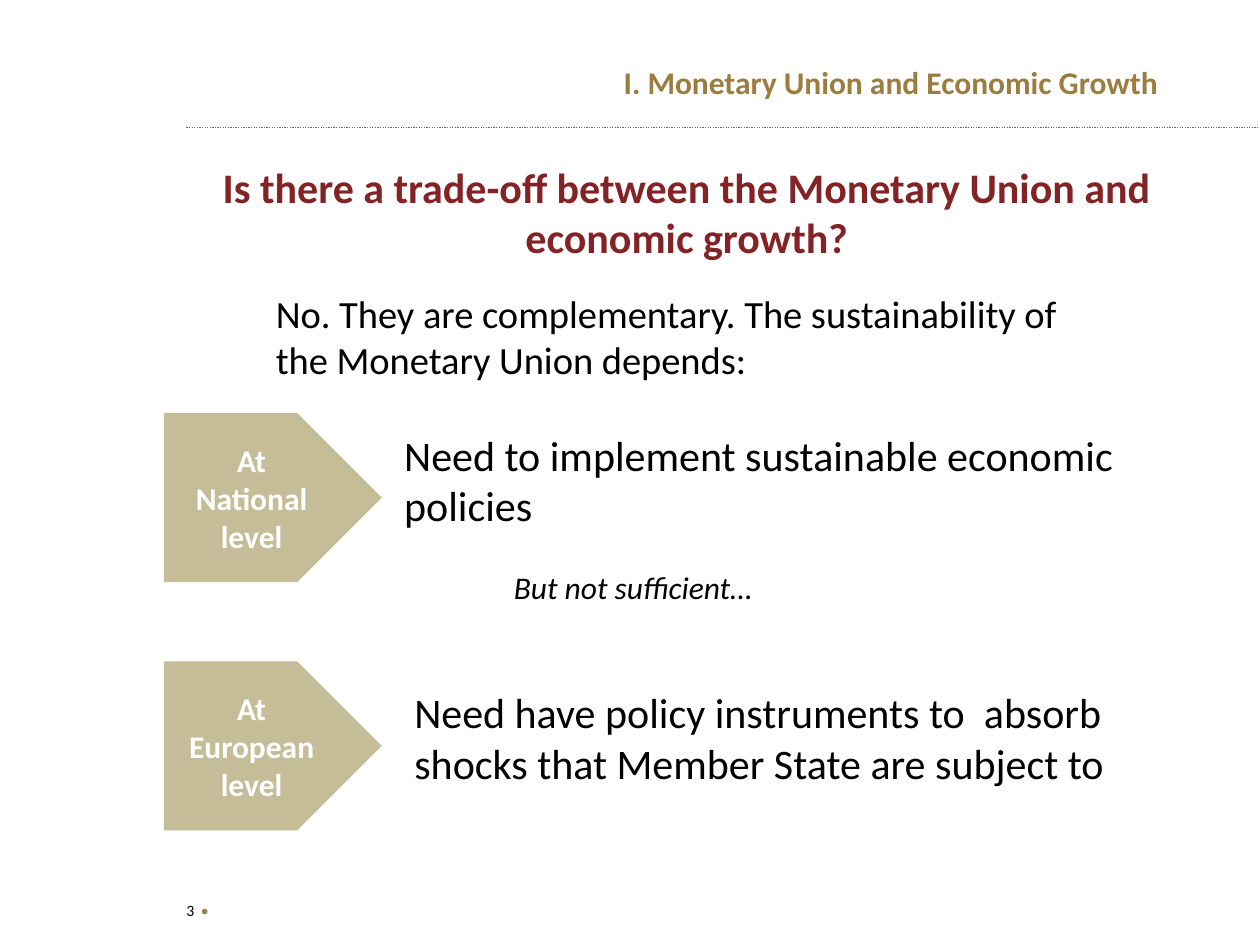
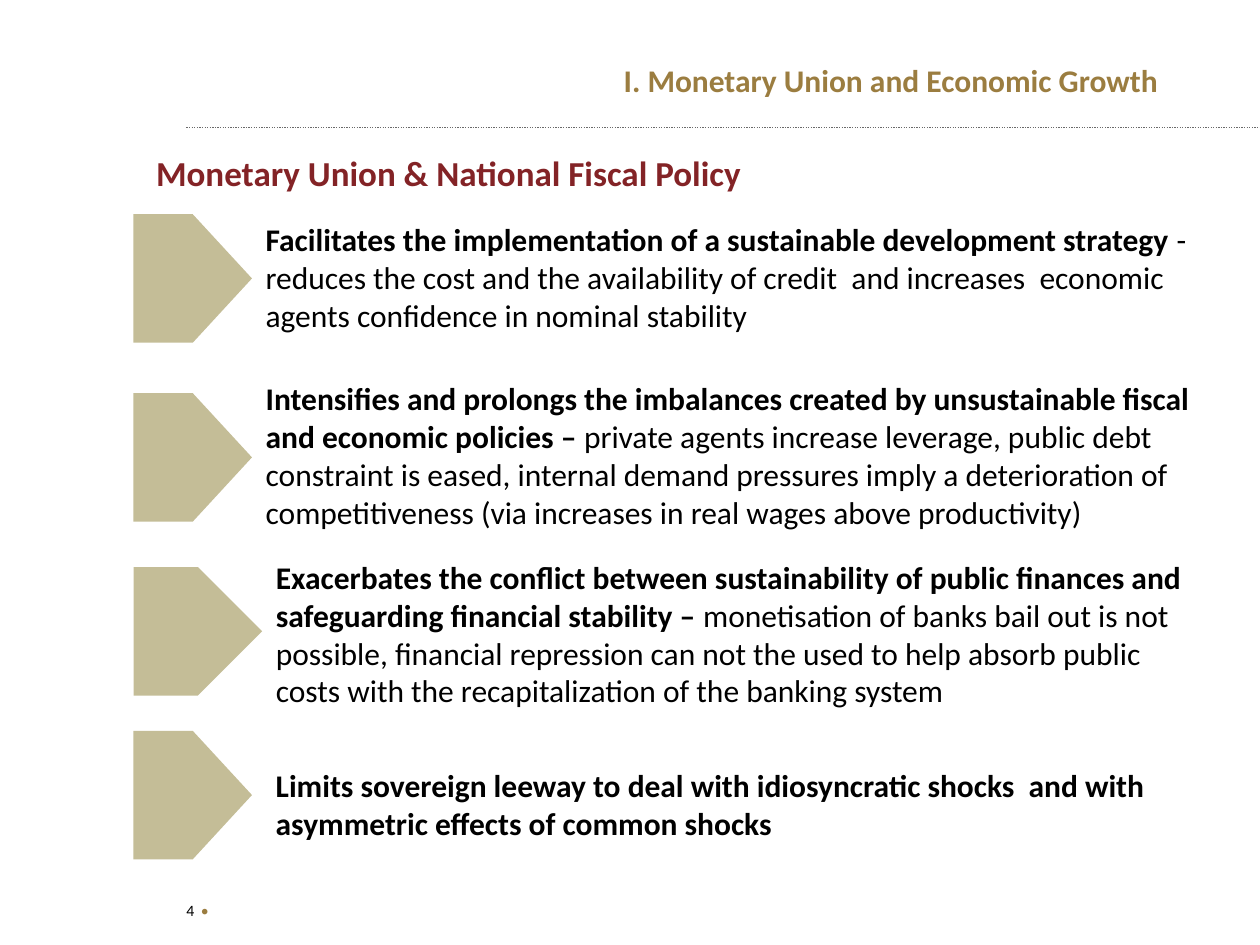
from dataclasses import dataclass
from typing import Optional

import pptx
import pptx.dml.color
import pptx.enum.dml
import pptx.enum.shapes
import pptx.enum.text
import pptx.oxml.ns
import pptx.util
from lxml import etree

Inches = pptx.util.Inches
Pt = pptx.util.Pt
ALIGN = pptx.enum.text.PP_ALIGN
ANCHOR = pptx.enum.text.MSO_ANCHOR

FONT = "Calibri"
COLORS = {
    "gold": "9B7D40",
    "red": "832326",
    "sand": "C4BD97",
    "rule": "696969",
    "text": "000000",
    "white": "FFFFFF",
}
SECTION = "I. Monetary Union and Economic Growth "


@dataclass
class Run:
    text: str
    size: float = 18
    color: str = "text"
    bold: bool = False
    italic: bool = False


@dataclass
class Box:
    left: float
    top: float
    width: float
    height: float
    runs: list[Run]
    align: Optional[int] = None


@dataclass
class Pentagon:
    left: float
    top: float
    width: float
    height: float
    lines: tuple[str, ...] = ()


def rgb(name: str) -> pptx.dml.color.RGBColor:
    return pptx.dml.color.RGBColor.from_string(COLORS[name])


def add_runs(p, runs: list[Run]) -> None:
    for run in runs:
        r = p.add_run()
        r.text = run.text
        r.font.name = FONT
        r.font.size = Pt(run.size)
        r.font.bold = run.bold
        r.font.italic = run.italic
        r.font.color.rgb = rgb(run.color)


def add_box(s, box: Box, inset: bool = True):
    sp = s.shapes.add_textbox(Inches(box.left), Inches(box.top),
                              Inches(box.width), Inches(box.height))
    tf = sp.text_frame
    tf.word_wrap = True
    if not inset:
        tf.margin_left = tf.margin_right = tf.margin_top = tf.margin_bottom = 0
    p = tf.paragraphs[0]
    p.alignment = box.align
    add_runs(p, box.runs)
    return sp


def add_pentagon(s, item: Pentagon) -> None:
    sp = s.shapes.add_shape(pptx.enum.shapes.MSO_SHAPE.PENTAGON,
                            Inches(item.left), Inches(item.top),
                            Inches(item.width), Inches(item.height))
    sp.shadow.inherit = False
    sp.fill.solid()
    sp.fill.fore_color.rgb = rgb("sand")
    sp.line.fill.background()
    tf = sp.text_frame
    tf.word_wrap = True
    tf.vertical_anchor = ANCHOR.MIDDLE
    for i, line in enumerate(item.lines):
        p = tf.add_paragraph() if i else tf.paragraphs[0]
        p.alignment = ALIGN.CENTER
        add_runs(p, [Run(line, color="white", bold=True)])


def add_base(prs, number: int, title_top: float):
    """Blank slide with the dotted rule, page number and section title."""
    s = prs.slides.add_slide(prs.slide_layouts[6])

    # Dotted rule
    rule = s.shapes.add_connector(pptx.enum.shapes.MSO_CONNECTOR.STRAIGHT,
                                  Inches(1.48), Inches(1.01), Inches(10), Inches(1.01))
    rule.line.color.rgb = rgb("rule")
    rule.line.width = Pt(0.75)
    rule.line.dash_style = pptx.enum.dml.MSO_LINE.ROUND_DOT
    etree.SubElement(rule._element.spPr, pptx.oxml.ns.qn("a:effectLst"))

    # Page number, with a widened space before the bullet
    page = add_box(s, Box(1.48, 7.15, 0.28, 0.2, [
        Run(str(number), 9), Run(" ", 8), Run("•", 9, "gold")]), inset=False)
    page.text_frame.word_wrap = False
    gap = page.text_frame.paragraphs[0].runs[1]
    gap.font._element.set("spc", "180")

    # Section title
    title = add_box(s, Box(4.92, title_top, 4.33, 0.45,
                           [Run(SECTION, color="gold", bold=True)], ALIGN.RIGHT), inset=False)
    title.text_frame.vertical_anchor = ANCHOR.MIDDLE
    title.text_frame.paragraphs[0].line_spacing = 0.9
    return s


def add_tradeoff_slide(prs) -> None:
    s = add_base(prs, 3, 0.44)
    levels = [
        Pentagon(1.3, 3.28, 1.73, 1.34, ("At", "National", "level")),
        Pentagon(1.3, 5.25, 1.73, 1.34, ("At European", "level")),
    ]
    boxes = [
        Box(1.22, 1.23, 8.46, 0.91, [Run(
            "Is there a trade-off between the Monetary Union and economic growth?",
            24, "red", bold=True)], ALIGN.CENTER),
        Box(2.09, 2.25, 6.61, 0.84, [Run(
            "No. They are complementary. The sustainability of the Monetary Union depends:", 22)]),
        Box(3.11, 3.36, 5.83, 0.91, [Run(
            "Need to implement sustainable economic policies", 24)]),
        Box(3.98, 4.46, 3.94, 0.4, [Run("But not sufficient…", italic=True)]),
        Box(3.19, 5.4, 6.3, 0.91, [Run(
            "Need have policy instruments to  absorb shocks that Member State are subject to", 24)]),
    ]
    for level in levels:
        add_pentagon(s, level)
    for box in boxes:
        add_box(s, box)


def add_fiscal_slide(prs) -> None:
    s = add_base(prs, 4, 0.43)
    add_box(s, Box(1.14, 1.15, 6.54, 0.44, [Run(
        "Monetary Union & National Fiscal Policy", 20, "red", bold=True)]))

    # Each effect: pentagon top and width, then its text
    effects = [
        (1.7, 0.94, Box(2.01, 1.7, 7.56, 1.01, [
            Run("Facilitates the implementation of a sustainable development strategy ", bold=True),
            Run("- reduces the cost and the availability of credit  and increases  economic "
                "agents confidence in nominal stability")])),
        (3.12, 0.94, Box(2.01, 2.96, 7.72, 1.31, [
            Run("Intensifies and prolongs the imbalances created by unsustainable fiscal "
                "and economic policies –", bold=True),
            Run(" private agents increase leverage, public debt constraint is eased, internal "
                "demand pressures imply a deterioration of competitiveness (via increases in "
                "real wages above productivity)")])),
        (4.5, 1.02, Box(2.09, 4.38, 7.48, 1.31, [
            Run("Exacerbates the conflict between sustainability of public finances and "
                "safeguarding financial stability –", bold=True),
            Run(" monetisation of banks bail out is not possible, financial repression can not "
                "the used to help absorb public costs with the recapitalization of the "
                "banking system")])),
        (5.8, 0.94, Box(2.09, 6.03, 7.56, 0.71, [
            Run("Limits sovereign leeway to deal with idiosyncratic shocks  and with "
                "asymmetric effects of common shocks", bold=True)])),
    ]
    for top, width, box in effects:
        add_pentagon(s, Pentagon(1.06, top, width, 1.02))
        add_box(s, box)


def main() -> None:
    prs = pptx.Presentation()
    prs.slide_width = Inches(10)
    prs.slide_height = Inches(7.5)
    add_tradeoff_slide(prs)
    add_fiscal_slide(prs)
    prs.save("out.pptx")


if __name__ == "__main__":
    main()
